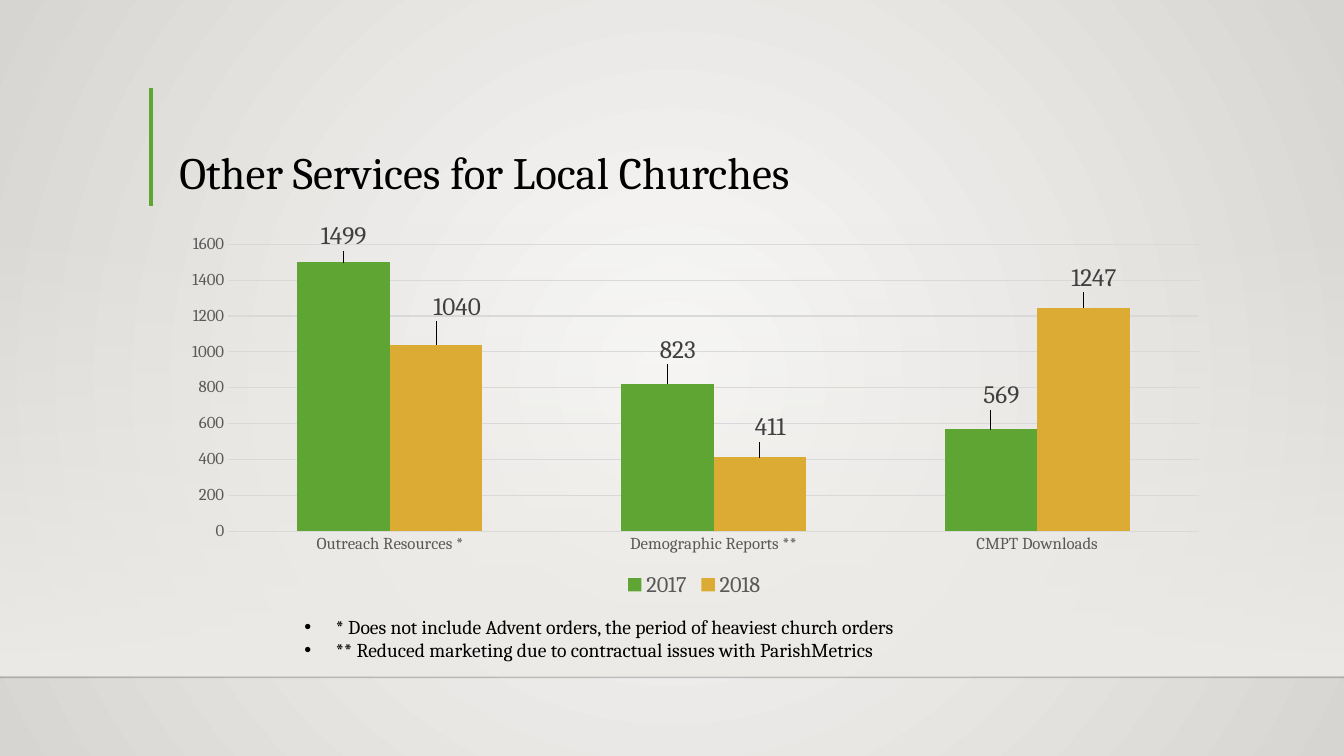
from lxml import etree
from pptx import Presentation, util as u
from pptx.chart.data import CategoryChartData
from pptx.dml.color import RGBColor
from pptx.enum import chart as ch, shapes, text
from pptx.oxml import parse_xml
from pptx.oxml.ns import nsdecls, qn

GREEN = RGBColor(0x5F, 0xA5, 0x34)
GOLD = RGBColor(0xDC, 0xAB, 0x34)
BLACK = RGBColor(0, 0, 0)
DARK = RGBColor(0x40, 0x40, 0x40)
GREY = RGBColor(0x59, 0x59, 0x59)
GRID = RGBColor(0xD9, 0xD9, 0xD9)
LIGHT = RGBColor(0xFA, 0xFA, 0xF9)
EDGE = RGBColor(0xD7, 0xD5, 0xD2)
BAND = RGBColor(0xED, 0xEB, 0xE7)

deck = Presentation()
deck.slide_width, deck.slide_height = u.Inches(13.33), u.Inches(7.5)
slide = deck.slides.add_slide(deck.slide_layouts[6])
left, wide = 1.68, 10.41


def style(font, size, color):
    font.name, font.size = "Cambria", u.Pt(size)
    font.color.rgb = color


def rule(x1, y1, x2, y2, color, width):
    line = slide.shapes.add_connector(
        shapes.MSO_CONNECTOR.STRAIGHT, *map(u.Inches, (x1, y1, x2, y2)))
    line.line.color.rgb, line.line.width = color, u.Pt(width)
    etree.SubElement(line.element.spPr, qn("a:effectLst"))
    return line


# Background: round gradient from the centre
fill = slide.background.fill
fill.gradient()
for stop, color in zip(fill.gradient_stops, (LIGHT, EDGE)):
    stop.color.rgb = color
lin = slide.element.find(".//" + qn("a:lin"))
lin.getparent().replace(lin, parse_xml(
    f'<a:path {nsdecls("a")} path="circle">'
    '<a:fillToRect l="50000" t="50000" r="50000" b="50000"/></a:path>'))

# Band that fades in downwards
band = slide.shapes.add_shape(
    shapes.MSO_SHAPE.RECTANGLE, 0, u.Inches(2.2), deck.slide_width, u.Inches(4.5))
band.shadow.inherit = False
band.line.fill.background()
band.fill.gradient()
band.fill.gradient_angle = 270
for stop, place in zip(band.fill.gradient_stops, (0, 1)):
    stop.color.rgb, stop.position = BAND, place
clear = band.element.find(".//" + qn("a:srgbClr"))
etree.SubElement(clear, qn("a:alpha"), val="0")

# Floor line and title accent
floor = rule(0, 6.72, 13.33, 6.72, BLACK, 1)
tone = floor.element.find(".//" + qn("a:srgbClr"))
etree.SubElement(tone, qn("a:alpha"), val="20000")
rule(1.5, 0.87, 1.5, 2.04, GREEN, 3)

# Title
title = slide.shapes.add_textbox(*map(u.Inches, (left, 0.88, wide, 1.15))).text_frame
title.word_wrap = True
title.vertical_anchor = text.MSO_ANCHOR.BOTTOM
title.text = "Other Services for Local Churches"
title.paragraphs[0].line_spacing = 0.9
style(title.paragraphs[0].runs[0].font, 32, BLACK)

# Chart
data = CategoryChartData()
data.categories = ["Outreach Resources *", "Demographic Reports **", "CMPT Downloads"]
data.add_series("2017", (1499, 823, 569))
data.add_series("2018", (1040, 411, 1247))
chart = slide.shapes.add_chart(
    ch.XL_CHART_TYPE.COLUMN_CLUSTERED,
    *map(u.Inches, (left, 2.2, wide, 3.77)), data).chart
style(chart.font, 10, BLACK)
chart.has_title = False
chart.has_legend = True
chart.legend.position = ch.XL_LEGEND_POSITION.BOTTOM
chart.legend.include_in_layout = False
style(chart.legend.font, 16, GREY)

for axis in (chart.category_axis, chart.value_axis):
    axis.major_tick_mark = axis.minor_tick_mark = ch.XL_TICK_MARK.NONE
    axis.format.line.fill.background()
    style(axis.tick_labels.font, 12, GREY)
scale = chart.value_axis
scale.minimum_scale, scale.maximum_scale, scale.major_unit = 0, 1600, 200
scale.has_major_gridlines = True
scale.major_gridlines.format.line.color.rgb = GRID
scale.major_gridlines.format.line.width = u.Pt(0.75)

# Plot area as shares of the chart
area = chart.element.find(".//" + qn("c:plotArea"))
for old in area.findall(qn("c:layout")):
    area.remove(old)
area.insert(0, parse_xml(
    f'<c:layout {nsdecls("c")}><c:manualLayout><c:layoutTarget val="inner"/>'
    '<c:xMode val="edge"/><c:yMode val="edge"/><c:x val="0.056"/><c:y val="0.053"/>'
    '<c:w val="0.925"/><c:h val="0.76"/></c:manualLayout></c:layout>'))

# Bars, with each value label nudged by a share of the chart
plot = chart.plots[0]
plot.gap_width, plot.overlap, plot.vary_by_categories = 150, 0, False
nudges = (((0, -0.02), (0.01, -0.04), (0.01, -0.04)),
          ((0.02, -0.05), (0.01, -0.03), (0.01, -0.03)))
for bars, color, moves in zip(plot.series, (GREEN, GOLD), nudges):
    bars.format.fill.solid()
    bars.format.fill.fore_color.rgb = color
    bars.data_labels.show_value = True
    style(bars.data_labels.font, 18, DARK)
    for i, (dx, dy) in enumerate(moves):
        label = bars.points[i].data_label
        style(label.font, 18, DARK)
        label.position = ch.XL_LABEL_POSITION.OUTSIDE_END
    spots = bars.data_labels._element.findall(qn("c:dLbl"))
    for spot, (dx, dy) in zip(spots, moves):
        spot.insert(1, parse_xml(
            f'<c:layout {nsdecls("c")}><c:manualLayout><c:x val="{dx}"/>'
            f'<c:y val="{dy}"/></c:manualLayout></c:layout>'))

# Footnotes
notes = slide.shapes.add_textbox(*map(u.Inches, (2.92, 6.05, 6.86, 0.57))).text_frame
notes.word_wrap = True
notes.auto_size = text.MSO_AUTO_SIZE.SHAPE_TO_FIT_TEXT
notes.text = ("* Does not include Advent orders, the period of heaviest church orders\n"
              "** Reduced marketing due to contractual issues with ParishMetrics")
for para in notes.paragraphs:
    props = para._p.get_or_add_pPr()
    props.set("marL", str(u.Inches(0.31)))
    props.set("indent", str(u.Inches(-0.31)))
    etree.SubElement(props, qn("a:buFont"), typeface="Arial")
    etree.SubElement(props, qn("a:buChar"), char="•")
    style(para.runs[0].font, 14, BLACK)

deck.save("out.pptx")
